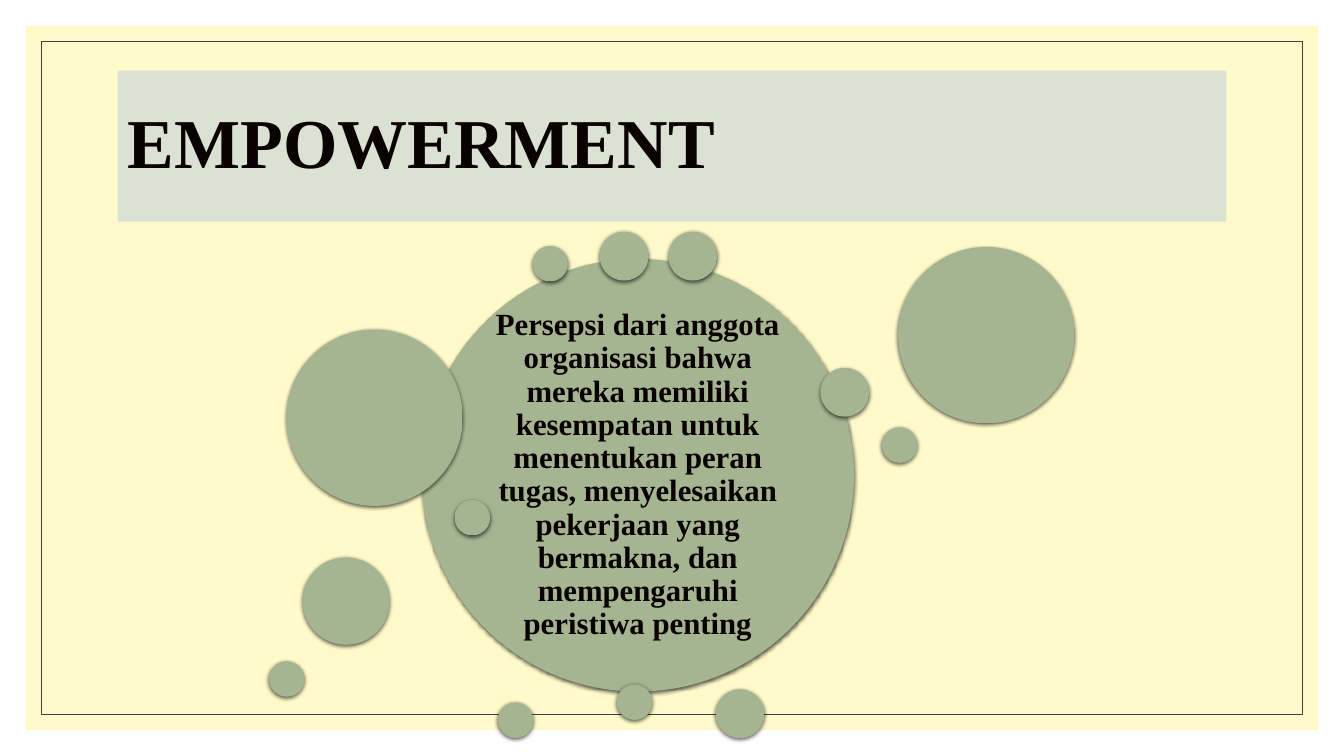
from lxml.etree import SubElement
from pptx import Presentation
from pptx.dml.color import RGBColor
from pptx.enum.shapes import MSO_SHAPE
from pptx.enum.text import MSO_ANCHOR, MSO_AUTO_SIZE, PP_ALIGN
from pptx.oxml.ns import qn
from pptx.util import Pt

COLORS = {
    "panel": "FEFAC9",
    "frame": "404040",
    "title": "DBE1D3",
    "text": "0A0201",
    "bubble_top": "A5B592",
    "bubble_bottom": "A4B490",
    "shadow": "000000",
}
FONT = "Times New Roman"
DEFINITION = (
    "Persepsi dari anggota organisasi bahwa mereka memiliki kesempatan "
    "untuk menentukan peran tugas, menyelesaikan pekerjaan yang bermakna, "
    "dan mempengaruhi peristiwa penting"
)
MAIN_BUBBLE = (109, 19.4, 309)
BUBBLES = {
    25.4: [(163.7, 336.2), (438, 139.7), (188.2, 10.1),
           (132.7, 191.5), (0.2, 306.7), (248.6, 323.3)],
    34.8: [(285.4, 0), (319.2, 326.9), (236.4, 0), (394.1, 97.2)],
    62.4: [(24, 232.6)],
    126: [(12.5, 69.8), (449.5, 10.8)],
}


def color(name):
    return RGBColor.from_string(COLORS[name])


def write_text(shape, text, size, alignment):
    frame = shape.text_frame
    frame.text = text
    frame.word_wrap = True
    frame.auto_size = MSO_AUTO_SIZE.NONE
    frame.vertical_anchor = MSO_ANCHOR.MIDDLE
    para = frame.paragraphs[0]
    para.alignment = alignment
    para.line_spacing = 0.9
    span = para.runs[0]
    span.font.name = FONT
    span.font.size = Pt(size)
    span.font.bold = True
    span.font.color.rgb = color("text")


def add_background(page, box):
    left, top, width, height = box
    title = page.shapes.title
    for margin in (18.7, 29.5):
        panel = page.shapes.add_shape(
            MSO_SHAPE.RECTANGLE, Pt(left + margin), Pt(top + margin),
            Pt(width - 2 * margin), Pt(height - 2 * margin))
        panel.shadow.inherit = False
        if margin == 18.7:
            panel.fill.solid()
            panel.fill.fore_color.rgb = color("panel")
            panel.line.fill.background()
        else:
            panel.fill.background()
            panel.line.color.rgb = color("frame")
            panel.line.width = Pt(0.5)
        title.element.addprevious(panel.element)


def add_title(page, box):
    title = page.shapes.title
    title.left, title.top, title.width, title.height = map(Pt, box)
    title.fill.solid()
    title.fill.fore_color.rgb = color("title")
    write_text(title, "EMPOWERMENT", 50, PP_ALIGN.LEFT)


def add_shadow(shape):
    shape.shadow.inherit = False
    effects = shape.element.spPr.find(qn("a:effectLst"))
    shadow = SubElement(effects, qn("a:outerShdw"), blurRad=str(Pt(3)),
                        dist=str(Pt(1)), dir="5400000", rotWithShape="0")
    tint = SubElement(shadow, qn("a:srgbClr"), val=COLORS["shadow"])
    SubElement(tint, qn("a:alpha"), val="63000")


def add_bubble(page, left, top, diameter):
    bubble = page.shapes.add_shape(
        MSO_SHAPE.OVAL, Pt(left), Pt(top), Pt(diameter), Pt(diameter))
    bubble.fill.gradient()
    bubble.fill.gradient_angle = 270
    for stop, name in zip(bubble.fill.gradient_stops,
                          ("bubble_top", "bubble_bottom")):
        stop.color.rgb = color(name)
    bubble.line.fill.background()
    add_shadow(bubble)
    return bubble


def add_bubbles(page, box):
    left, top = box[:2]
    x, y, diameter = MAIN_BUBBLE
    main_bubble = add_bubble(page, left + x, top + y, diameter)
    frame = main_bubble.text_frame
    frame.margin_left = frame.margin_right = Pt(6.5)
    frame.margin_top = frame.margin_bottom = Pt(6.5)
    write_text(main_bubble, DEFINITION, 22, PP_ALIGN.CENTER)
    for diameter, places in BUBBLES.items():
        for x, y in places:
            add_bubble(page, left + x, top + y, diameter)


def main():
    deck = Presentation()
    deck.slide_width, deck.slide_height = Pt(960), Pt(540)
    page = deck.slides.add_slide(deck.slide_layouts[5])
    add_background(page, (0, 0, 960, 540))
    add_title(page, (84, 50.4, 792, 108))
    add_bubbles(page, (192, 165.6, 576, 362))
    deck.save("out.pptx")


if __name__ == "__main__":
    main()
